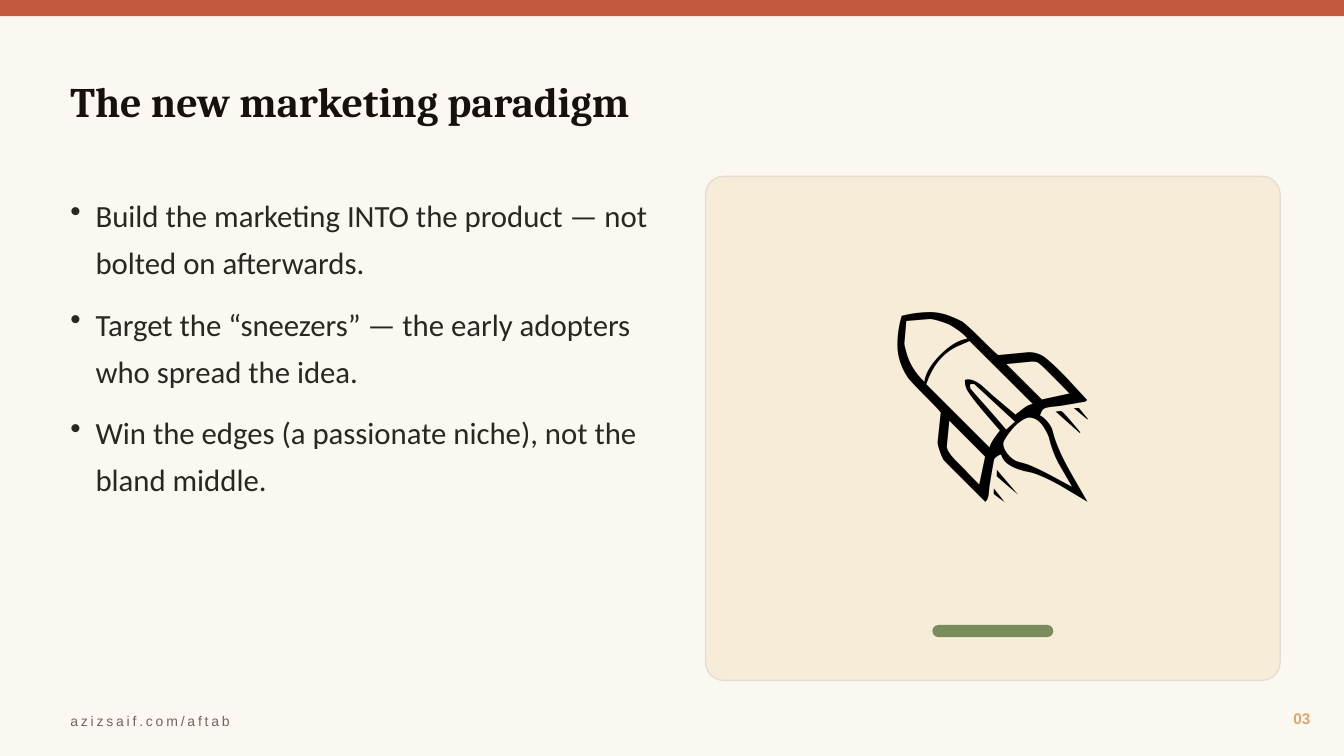
import pptx
import pptx.util
import pptx.dml.color
import pptx.enum.shapes
import pptx.enum.text
import pptx.oxml.ns
from lxml import etree

Pt = pptx.util.Pt
Align = pptx.enum.text.PP_ALIGN
Anchor = pptx.enum.text.MSO_ANCHOR
Shape = pptx.enum.shapes.MSO_SHAPE

TITLE = "The new marketing paradigm"
POINTS = [
    "Build the marketing INTO the product — not bolted on afterwards.",
    "Target the “sneezers” — the early adopters who spread the idea.",
    "Win the edges (a passionate niche), not the bland middle.",
]
ICON = "🚀"
PAGE = "03"
SITE = "azizsaif.com/aftab"

COLORS = {
    "paper": "FBF7F1", "band": "C45A3D", "title": "16110D", "body": "2A2622",
    "card": "F6ECD8", "edge": "E4DDD0", "accent": "7A8C5C", "icon": "000000",
    "page": "D9A86C", "site": "6E665C",
}
WIDTH, HEIGHT = 960, 540
MARGIN = 43.2
INDENT = 18
CARD_LEFT, CARD_TOP, CARD_WIDTH, CARD_HEIGHT = 504, 126, 410.4, 360
ACCENT_WIDTH = 86.4


def color(name):
    """Return the named palette colour."""
    return pptx.dml.color.RGBColor.from_string(COLORS[name])


def add_block(slide, kind, box, fill, radius=None, edge=None):
    """Add a filled shape with an optional corner radius and outline."""
    block = slide.shapes.add_shape(kind, *map(Pt, box))
    block.shadow.inherit = False
    block.fill.solid()
    block.fill.fore_color.rgb = color(fill)
    if radius is not None:
        block.adjustments[0] = radius
    if edge:
        block.line.color.rgb = color(edge)
        block.line.width = Pt(1)
    else:
        block.line.fill.background()


def add_text(slide, box, lines, font, size, ink, bold=False,
             align=Align.LEFT, anchor=Anchor.MIDDLE):
    """Add a wrapped text box and return its paragraphs."""
    frame = slide.shapes.add_textbox(*map(Pt, box)).text_frame
    frame.word_wrap = True
    frame.vertical_anchor = anchor
    frame.text = "\n".join(lines)
    for paragraph in frame.paragraphs:
        paragraph.alignment = align
        for run in paragraph.runs:
            run.font.name = font
            run.font.size = Pt(size)
            run.font.bold = bold
            run.font.color.rgb = color(ink)
    return frame.paragraphs


def add_bullet(paragraph):
    """Give a paragraph a hanging bullet and its spacing."""
    properties = paragraph._p.get_or_add_pPr()
    properties.set("marL", str(Pt(INDENT)))
    properties.set("indent", str(-Pt(INDENT)))
    bullet = etree.SubElement(properties, pptx.oxml.ns.qn("a:buChar"))
    bullet.set("char", "•")
    paragraph.line_spacing = 1.28
    paragraph.space_after = Pt(10)


def main():
    """Build and save the slide."""
    deck = pptx.Presentation()
    deck.slide_width, deck.slide_height = Pt(WIDTH), Pt(HEIGHT)
    slide = deck.slides.add_slide(deck.slide_layouts[6])
    slide.background.fill.solid()
    slide.background.fill.fore_color.rgb = color("paper")

    add_block(slide, Shape.RECTANGLE, (0, 0, WIDTH, 11.52), "band")
    add_text(slide, (MARGIN, 36, 871.2, 72), [TITLE], "Cambria", 30, "title", bold=True)

    add_block(slide, Shape.ROUNDED_RECTANGLE,
              (CARD_LEFT, CARD_TOP, CARD_WIDTH, CARD_HEIGHT), "card", 0.036, "edge")
    add_text(slide, (CARD_LEFT, CARD_TOP, CARD_WIDTH, 295.2), [ICON],
             "Calibri", 150, "icon", align=Align.CENTER)
    accent_left = CARD_LEFT + (CARD_WIDTH - ACCENT_WIDTH) / 2
    add_block(slide, Shape.ROUNDED_RECTANGLE,
              (accent_left, 446.4, ACCENT_WIDTH, 8.64), "accent", 0.5)

    points = add_text(slide, (MARGIN, 129.6, 432, 360), POINTS,
                      "Calibri", 22, "body", anchor=Anchor.TOP)
    for point in points:
        add_bullet(point)

    add_text(slide, (878.4, 500.4, 64.8, 25.2), [PAGE], "Arial", 11, "page",
             bold=True, align=Align.RIGHT)
    site = add_text(slide, (MARGIN, 504, 576, 21.6), [SITE], "Arial", 10, "site")
    site[0].runs[0].font._element.set("spc", "200")

    deck.save("out.pptx")


if __name__ == "__main__":
    main()
